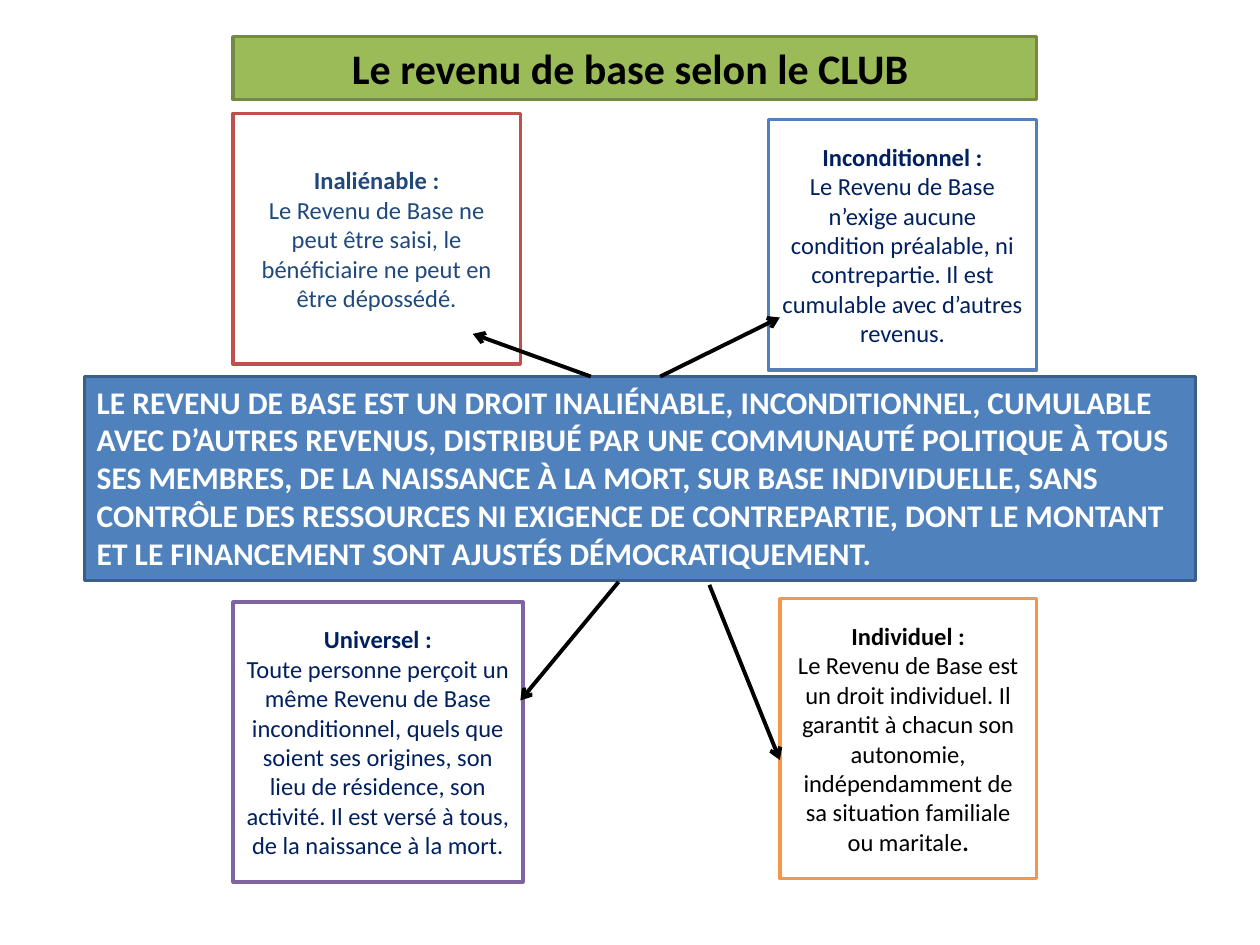
from lxml.etree import SubElement
from pptx import Presentation
from pptx.dml.color import RGBColor
from pptx.enum.shapes import MSO_CONNECTOR as Link, MSO_SHAPE as Kind
from pptx.enum.text import MSO_ANCHOR as Anchor, PP_ALIGN as Align
from pptx.oxml.ns import qn
from pptx.util import Cm, Pt

FONT = "Calibri"
LEFT, RIGHT = 4.7, 20.9  # outer edges shared by title and boxes

TITLE = "Le revenu de base selon le CLUB "
BANNER = (
    "LE REVENU DE BASE EST UN DROIT INALIÉNABLE, INCONDITIONNEL, CUMULABLE "
    "AVEC D’AUTRES REVENUS, DISTRIBUÉ PAR UNE COMMUNAUTÉ POLITIQUE À TOUS "
    "SES MEMBRES, DE LA NAISSANCE À LA MORT, SUR BASE INDIVIDUELLE, SANS "
    "CONTRÔLE DES RESSOURCES NI EXIGENCE DE CONTREPARTIE, DONT LE MONTANT "
    "ET LE FINANCEMENT SONT AJUSTÉS DÉMOCRATIQUEMENT."
)

# left, top, width, height, line, text colour, heading, body, bold ending
BOXES = [
    (RIGHT - 5.41, 2.41, 5.41, 5.05, "4F81BD", "002060", "Inconditionnel :",
     "Le Revenu de Base n’exige aucune condition préalable, ni "
     "contrepartie. Il est cumulable avec d’autres revenus.", ""),
    (LEFT, 2.29, 5.79, 5.05, "C0504D", "1F497D", "Inaliénable :",
     "Le Revenu de Base ne peut être saisi, le bénéficiaire ne peut en "
     "être dépossédé.", ""),
    (RIGHT - 5.18, 12.07, 5.18, 5.64, "F79646", "000000", "Individuel :",
     "Le Revenu de Base est un droit individuel. Il garantit à chacun son "
     "autonomie, indépendamment de sa situation familiale ou maritale", "."),
    (LEFT, 12.14, 5.84, 5.64, "8064A2", "002060", "Universel :",
     "Toute personne perçoit un même Revenu de Base inconditionnel, quels "
     "que soient ses origines, son lieu de résidence, son activité. Il est "
     "versé à tous, de la naissance à la mort.", ""),
]

# from x, from y, to x, to y
ARROWS = [
    (11.91, 7.59, 9.53, 6.73),
    (13.31, 7.59, 15.72, 6.4),
    (12.47, 11.73, 10.49, 14.12),
    (14.3, 11.79, 15.72, 15.32),
]


def rgb(code):
    return RGBColor.from_string(code)


def style(run, size, color, bold):
    font = run.font
    font.name, font.size, font.bold = FONT, Pt(size), bold
    font.color.rgb = rgb(color)


def add_rect(slide, x, y, w, h, fill, line, anchor):
    rect = slide.shapes.add_shape(Kind.RECTANGLE, Cm(x), Cm(y), Cm(w), Cm(h))
    rect.shadow.inherit = False
    rect.fill.solid()
    rect.fill.fore_color.rgb = rgb(fill)
    rect.line.color.rgb = rgb(line)
    rect.line.width = Pt(2)
    frame = rect.text_frame
    frame.word_wrap = True
    frame.vertical_anchor = anchor
    return frame


def add_bar(slide, x, y, w, h, fill, line, text, size, color, align):
    frame = add_rect(slide, x, y, w, h, fill, line, Anchor.TOP)
    frame.text = text
    para = frame.paragraphs[0]
    para.alignment = align
    style(para.runs[0], size, color, True)


def add_box(slide, x, y, w, h, line, color, head, body, end):
    frame = add_rect(slide, x, y, w, h, "FFFFFF", line, Anchor.MIDDLE)
    frame.text = f"{head}\n{body}"
    if end:
        frame.paragraphs[1].add_run().text = end
    for para in frame.paragraphs:
        para.alignment = Align.CENTER
        for run in para.runs:
            style(run, 14, color, run.text in (head, end))


def add_arrow(slide, x1, y1, x2, y2):
    arrow = slide.shapes.add_connector(
        Link.STRAIGHT, Cm(x1), Cm(y1), Cm(x2), Cm(y2))
    arrow.line.color.rgb = rgb("000000")
    arrow.line.width = Pt(2.25)
    SubElement(arrow.line._get_or_add_ln(), qn("a:tailEnd"), type="arrow")
    SubElement(arrow._element.spPr, qn("a:effectLst"))


def main():
    deck = Presentation()
    deck.slide_width, deck.slide_height = Cm(25.4), Cm(19.05)
    slide = deck.slides.add_slide(deck.slide_layouts[6])

    # Four principles
    for box in BOXES:
        add_box(slide, *box)

    # Central definition and title
    add_bar(slide, 1.7, 7.59, 22.4, 4.11, "4F81BD", "3A5F8C",
            BANNER, 18, "FFFFFF", Align.LEFT)
    add_bar(slide, LEFT, 0.74, RIGHT - LEFT, 1.27, "9BBB59", "738A42",
            TITLE, 24, "000000", Align.CENTER)

    # Links from the definition to the principles
    for ends in ARROWS:
        add_arrow(slide, *ends)

    deck.save("out.pptx")


if __name__ == "__main__":
    main()
